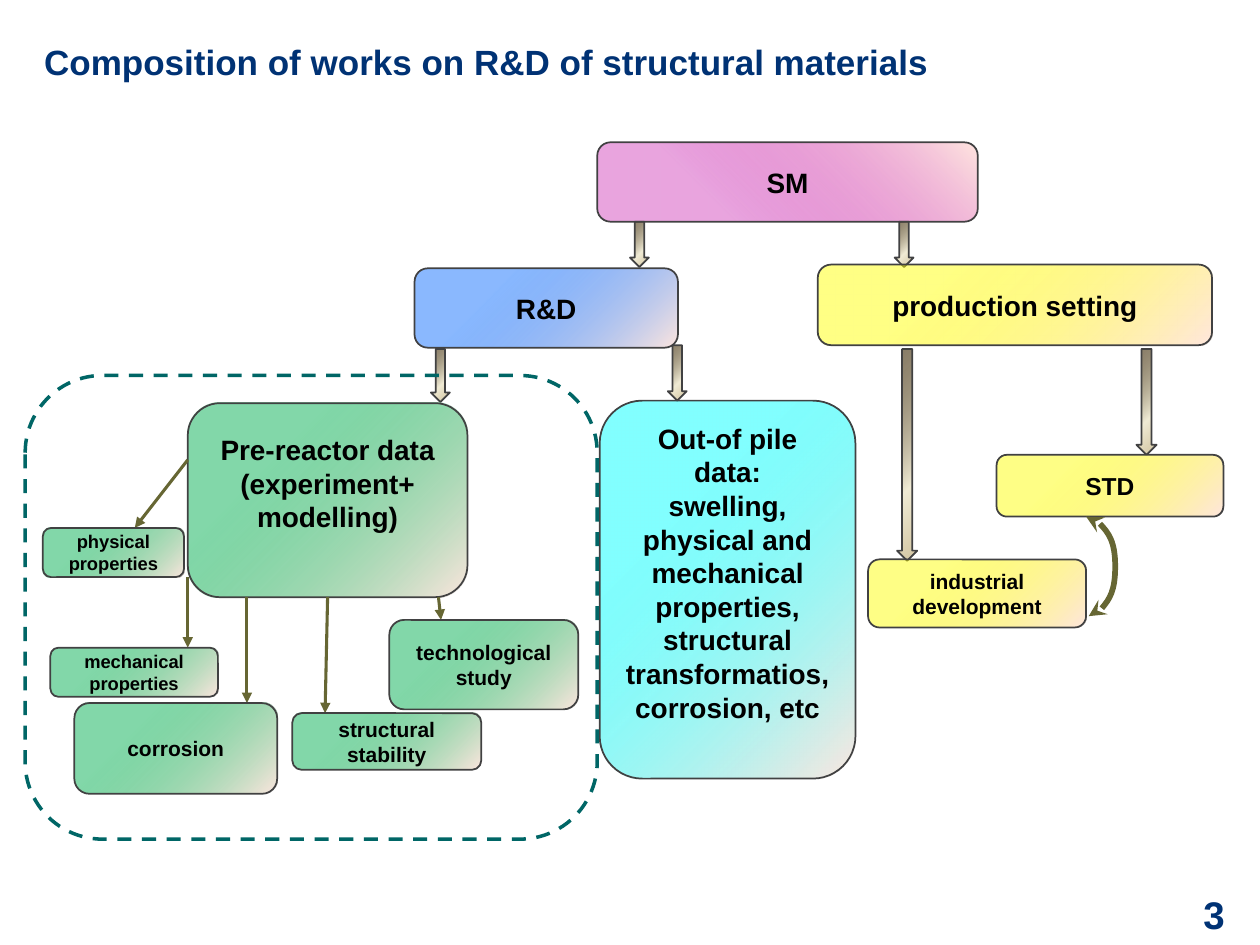
from pptx import Presentation
from pptx import oxml
from pptx import util as u
from pptx.dml.color import RGBColor
from pptx.enum import dml, shapes, text
from pptx.oxml.ns import nsdecls, qn

COLORS = {
    "navy": "003274", "black": "000000", "outline": "414142", "olive": "666633",
    "teal": "006666", "blush": "FFE7E0", "pink": "C30DA9", "blue": "0066FF",
    "yellow": "FFFF00", "green": "00B050", "cyan": "00FFFF",
    "umber": "382400", "cream": "F0EBD5", "sand": "D1C39F",
}
OPACITY = {"pink": 37, "blue": 46, "yellow": 48, "green": 49, "cyan": 49}
ARROW_STOPS = [(0, "umber", 59), (65, "cream", 100), (100, "sand", 100)]


class SlideBuilder:
    font = "Arial"

    def __init__(self, page):
        self.page = page

    def color(self, name):
        return RGBColor.from_string(COLORS[name])

    def lengths(self, values):
        return [u.Inches(value) for value in values]

    def label(self, frame, wording, size, color, align):
        frame.text = wording
        frame.word_wrap = True
        frame.vertical_anchor = text.MSO_ANCHOR.MIDDLE
        for para in frame.paragraphs:
            para.alignment = align
            for span in para.runs:
                span.font.name = self.font
                span.font.size = u.Pt(size)
                span.font.bold = True
                span.font.color.rgb = self.color(color)

    def inset(self, frame, left=0, bottom=0):
        frame.margin_left, frame.margin_bottom = self.lengths((left, bottom))
        frame.margin_top = frame.margin_right = 0

    def title(self, wording, area):
        box = self.page.shapes.title
        box.left, box.top, box.width, box.height = self.lengths(area)
        frame = box.text_frame
        self.label(frame, wording, 20, "navy", text.PP_ALIGN.LEFT)
        frame.auto_size = text.MSO_AUTO_SIZE.NONE
        self.inset(frame, left=0.07, bottom=0.3)

    def number(self, wording, area):
        frame = self.page.shapes.add_textbox(*self.lengths(area)).text_frame
        self.label(frame, wording, 22, "navy", text.PP_ALIGN.RIGHT)
        self.inset(frame)

    def shape(self, kind, area, line="outline", width=1):
        box = self.page.shapes.add_shape(kind, *self.lengths(area))
        box.shadow.inherit = False
        box.line.color.rgb = self.color(line)
        box.line.width = u.Pt(width)
        return box

    def gradient(self, box, stops, angle=315):
        box.fill.gradient()
        box.fill.gradient_angle = angle
        stop_list = box._element.spPr.find(qn("a:gradFill")).find(qn("a:gsLst"))
        for stop in list(stop_list):
            stop_list.remove(stop)
        for position, name, opacity in stops:
            stop_list.append(oxml.parse_xml(
                f'<a:gs {nsdecls("a")} pos="{position * 1000}">'
                f'<a:srgbClr val="{COLORS[name]}">'
                f'<a:alpha val="{opacity * 1000}"/></a:srgbClr></a:gs>'))

    def node(self, wording, area, color, size, angle=315, bottom=0.05):
        box = self.shape(shapes.MSO_SHAPE.ROUNDED_RECTANGLE, area)
        self.gradient(box, [(30, color, OPACITY[color]), (100, "blush", 100)], angle)
        self.label(box.text_frame, wording, size, "black", text.PP_ALIGN.CENTER)
        box.text_frame.margin_bottom = u.Inches(bottom)

    def block_arrow(self, area):
        self.gradient(self.shape(shapes.MSO_SHAPE.DOWN_ARROW, area), ARROW_STOPS)

    def frame(self, area):
        box = self.shape(shapes.MSO_SHAPE.ROUNDED_RECTANGLE, area, "teal", 2)
        box.fill.background()
        box.line.dash_style = dml.MSO_LINE.DASH

    def connector(self, start, end, kind=shapes.MSO_CONNECTOR.STRAIGHT,
                  width=1.75, heads=(("tailEnd", "triangle"),)):
        link = self.page.shapes.add_connector(kind, *self.lengths(start + end))
        link.line.color.rgb = self.color("olive")
        link.line.width = u.Pt(width)
        outline = link._element.spPr.find(qn("a:ln"))
        for tag, head in heads:
            outline.append(oxml.parse_xml(f'<a:{tag} {nsdecls("a")} type="{head}"/>'))
        link._element.spPr.append(oxml.parse_xml(f'<a:effectLst {nsdecls("a")}/>'))
        return link

    def curve(self, start, end, bulge):
        link = self.connector(start, end, shapes.MSO_CONNECTOR.CURVE, 3.25,
                              (("headEnd", "stealth"), ("tailEnd", "stealth")))
        ratio = round(bulge / (end[0] - start[0]) * 100000)
        geometry = link._element.spPr.find(qn("a:prstGeom"))
        for guides in geometry.findall(qn("a:avLst")):
            geometry.remove(guides)
        geometry.append(oxml.parse_xml(
            f'<a:avLst {nsdecls("a")}><a:gd name="adj1" fmla="val {ratio}"/></a:avLst>'))


def main():
    deck = Presentation()
    deck.slide_width, deck.slide_height = u.Inches(10), u.Inches(7.5)
    builder = SlideBuilder(deck.slides.add_slide(deck.slide_layouts[5]))

    builder.title("Composition of works on R&D of structural materials",
                  (0.28, 0.11, 8.35, 1.05))
    builder.number("3", (9.03, 7.05, 0.69, 0.41))

    builder.node("SM", (4.74, 1.13, 3.02, 0.63), "pink", 16, angle=45)
    for left in (5, 7.1):
        builder.block_arrow((left, 1.76, 0.15, 0.36))
    builder.node("R&D", (3.29, 2.13, 2.09, 0.63), "blue", 16)
    builder.node("production setting", (6.49, 2.1, 3.13, 0.64), "yellow", 16)
    for area in ((3.42, 2.77, 0.15, 0.42), (5.3, 2.74, 0.15, 0.44),
                 (7.12, 2.77, 0.16, 1.68), (9.02, 2.77, 0.16, 0.84)):
        builder.block_arrow(area)

    builder.node("Pre-reactor data\n(experiment+\nmodelling)",
                 (1.49, 3.2, 2.22, 1.54), "green", 16, bottom=0.32)
    builder.node("Out-of pile data:\nswelling, physical and mechanical properties, "
                 "structural transformatios,corrosion, etc",
                 (4.76, 3.18, 2.03, 3), "cyan", 16, bottom=0.32)

    for start, end in (((1.49, 3.65), (1.07, 4.19)), ((1.49, 4.58), (1.49, 5.14)),
                       ((1.96, 4.74), (1.96, 5.58)), ((2.6, 4.74), (2.58, 5.66)),
                       ((3.48, 4.74), (3.5, 4.92))):
        builder.connector(start, end)

    for wording, area, color, size in (
        ("physical properties", (0.34, 4.19, 1.12, 0.39), "green", 10.5),
        ("mechanical properties", (0.4, 5.14, 1.33, 0.39), "green", 10.5),
        ("corrosion", (0.59, 5.58, 1.61, 0.72), "green", 12),
        ("structural stability", (2.32, 5.66, 1.5, 0.45), "green", 12),
        ("technological study", (3.09, 4.92, 1.5, 0.71), "green", 12),
        ("industrial development", (6.89, 4.44, 1.73, 0.54), "yellow", 12),
        ("STD", (7.91, 3.61, 1.8, 0.49), "yellow", 14),
    ):
        builder.node(wording, area, color, size)

    builder.curve((8.62, 4.1), (8.64, 4.89), bulge=0.23)
    builder.frame((0.2, 2.98, 4.54, 3.68))
    deck.save("out.pptx")


if __name__ == "__main__":
    main()
